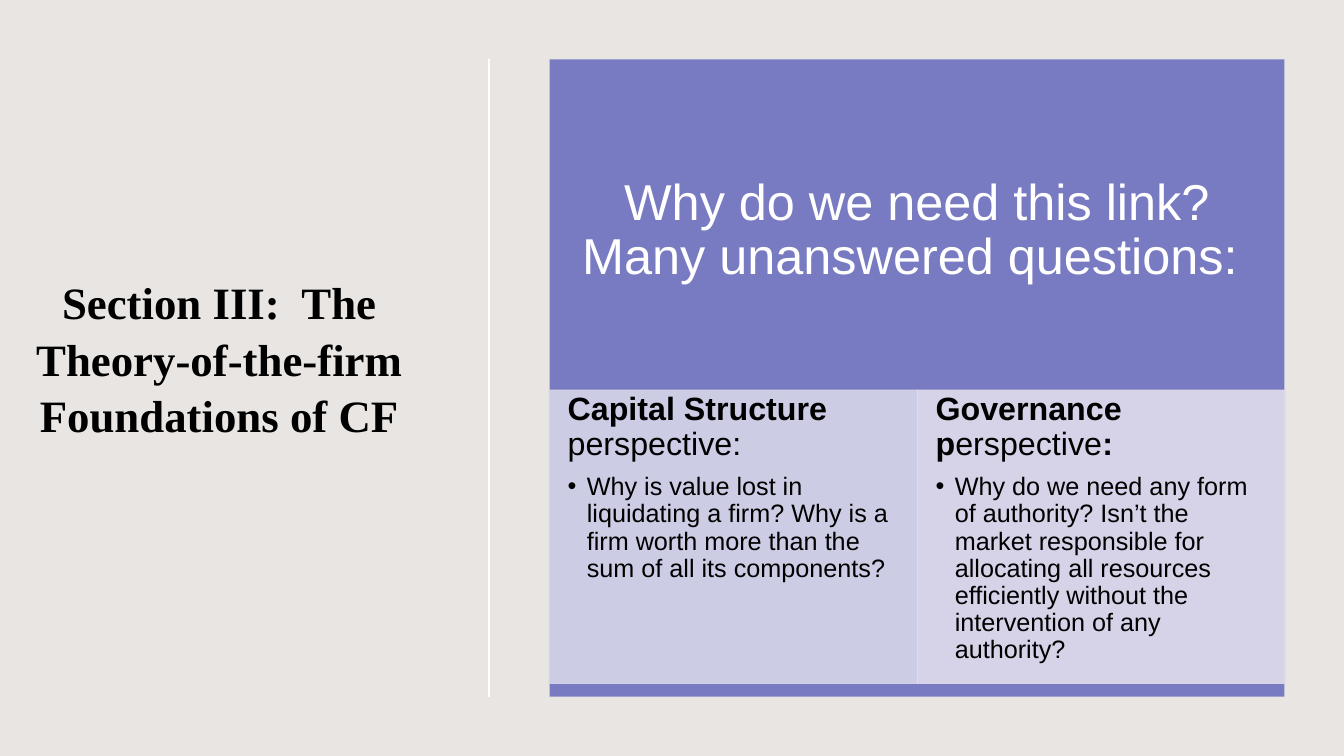
import pptx
import pptx.util
import pptx.dml.color
import pptx.enum.shapes
import pptx.enum.text
import pptx.oxml
import pptx.oxml.ns
from pptx.util import Inches

ALIGN = pptx.enum.text.PP_ALIGN
ANCHOR = pptx.enum.text.MSO_ANCHOR


def paint(color_format, hex_string, alpha=None):
    color_format.rgb = pptx.dml.color.RGBColor.from_string(hex_string)
    if alpha is not None:
        for color in color_format._xFill.iter(pptx.oxml.ns.qn("a:srgbClr")):
            pptx.oxml.ns.qn("a:alpha")
            etree_alpha = color.makeelement(pptx.oxml.ns.qn("a:alpha"), {"val": str(alpha * 1000)})
            color.append(etree_alpha)


def format_paragraph(paragraph, size, color, font_name="Arial", spacing=0.9, after=0):
    paragraph.line_spacing = spacing
    paragraph.space_before = pptx.util.Pt(0)
    paragraph.space_after = pptx.util.Pt(after)
    for run in paragraph.runs:
        run.font.size = pptx.util.Pt(size)
        run.font.name = font_name
        paint(run.font.color, color)


presentation = pptx.Presentation()
presentation.slide_width = Inches(13.33)
presentation.slide_height = Inches(7.5)
slide = presentation.slides.add_slide(presentation.slide_layouts[3])
slide.background.fill.solid()
paint(slide.background.fill.fore_color, "E8E5E2")

title = slide.shapes.title
title.left, title.top, title.width, title.height = Inches(0.2), Inches(1.04), Inches(3.95), Inches(5.13)
title.text_frame.text = "Section III:  The Theory-of-the-firm Foundations of CF"
title.text_frame.auto_size = pptx.enum.text.MSO_AUTO_SIZE.NONE
title.text_frame.vertical_anchor = ANCHOR.TOP
title.text_frame.margin_top = Inches(1.66)
title_paragraph = title.text_frame.paragraphs[0]
title_paragraph.alignment = ALIGN.CENTER
format_paragraph(title_paragraph, 32, "000000", "Times New Roman", 1.05)
title_paragraph.runs[0].font.bold = True

divider = slide.shapes.add_connector(
    pptx.enum.shapes.MSO_CONNECTOR.STRAIGHT, Inches(4.85), Inches(0.59), Inches(4.85), Inches(6.91))
paint(divider.line.color, "FFFFFF")
divider.line.width = pptx.util.Pt(1)
divider.element.spPr.append(pptx.oxml.parse_xml("<a:effectLst %s/>" % pptx.oxml.ns.nsdecls("a")))

backdrop = slide.shapes.add_shape(
    pptx.enum.shapes.MSO_SHAPE.RECTANGLE, Inches(5.45), Inches(0.59), Inches(7.29), Inches(6.32))
backdrop.shadow.inherit = False
backdrop.fill.solid()
paint(backdrop.fill.fore_color, "787BC1")
backdrop.line.fill.background()
title.element.addprevious(backdrop.element)

question = slide.shapes.add_textbox(Inches(5.45), Inches(0.59), Inches(7.29), Inches(3.41))
question_frame = question.text_frame
question_frame.word_wrap = True
question_frame.vertical_anchor = ANCHOR.MIDDLE
question_frame.margin_left = question_frame.margin_right = Inches(0.28)
question_frame.margin_top = question_frame.margin_bottom = Inches(0.28)
question_frame.text = "Why do we need this link? Many unanswered questions: "
question_frame.paragraphs[0].alignment = ALIGN.CENTER
format_paragraph(question_frame.paragraphs[0], 36, "FFFFFF")

perspectives = [
    ("D6D7E9", [("Capital Structure ", True), ("perspective:", False)],
     "Why is value lost in liquidating a firm? Why is a firm worth more than the sum of all "
     "its components?"),
    ("E1DCEC", [("Governance p", True), ("erspective", False), (":", True)],
     "Why do we need any form of authority? Isn’t the market responsible for allocating all "
     "resources efficiently without the intervention of any authority?"),
]
for index, (fill_color, heading_parts, detail) in enumerate(perspectives):
    panel = slide.placeholders[index + 1]
    panel.left, panel.top = Inches(5.45 + 3.65 * index), Inches(3.87)
    panel.width, panel.height = Inches(3.65), Inches(2.91)
    panel.fill.solid()
    paint(panel.fill.fore_color, fill_color, 90)
    paint(panel.line.color, fill_color, 90)
    panel.line.width = pptx.util.Pt(0.75)

    frame = panel.text_frame
    frame.auto_size = pptx.enum.text.MSO_AUTO_SIZE.NONE
    frame.vertical_anchor = ANCHOR.TOP
    frame.margin_left = frame.margin_right = Inches(0.18)
    frame.margin_top = frame.margin_bottom = Inches(0.03)

    heading = frame.paragraphs[0]
    for text, bold in heading_parts:
        run = heading.add_run()
        run.text = text
        run.font.bold = bold
    format_paragraph(heading, 23, "000000", after=8)

    bullet = frame.add_paragraph()
    bullet.text = detail
    bullet.level = 1
    format_paragraph(bullet, 18, "000000", after=3)

    for paragraph, indent, marks in (
        (heading, 0, ["<a:buNone %s/>"]),
        (bullet, 0.19, ['<a:buFont %s typeface="Arial"/>', '<a:buChar %s char="•"/>']),
    ):
        properties = paragraph._p.get_or_add_pPr()
        properties.set("marL", str(Inches(indent)))
        properties.set("indent", str(-Inches(indent)))
        for mark in marks:
            properties.append(pptx.oxml.parse_xml(mark % pptx.oxml.ns.nsdecls("a")))

presentation.save("out.pptx")
